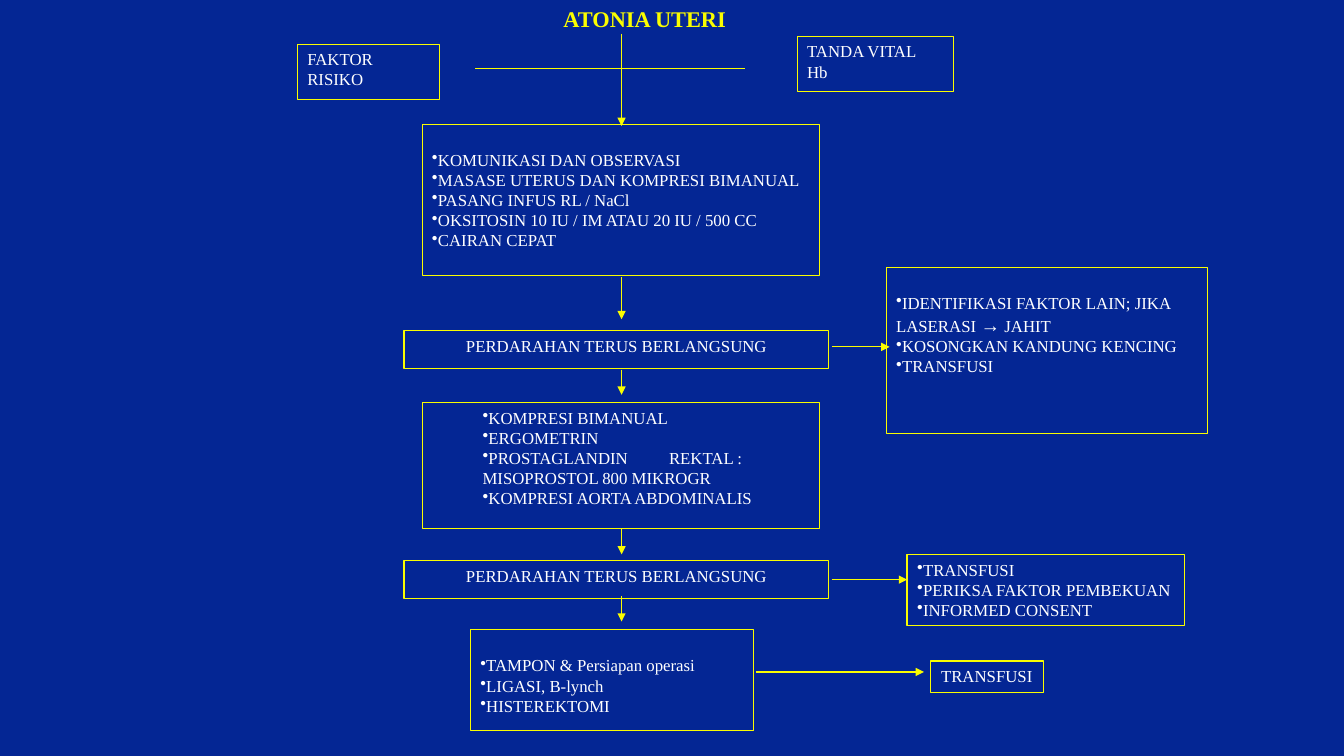
from typing import NamedTuple

from lxml.etree import SubElement
from pptx import Presentation
from pptx.dml.color import RGBColor
from pptx.enum.shapes import MSO_CONNECTOR as Connector, MSO_SHAPE as Shape
from pptx.enum.text import MSO_ANCHOR as Anchor, MSO_AUTO_SIZE as AutoSize, PP_ALIGN as Align
from pptx.oxml.ns import qn
from pptx.util import Inches, Pt

COLORS = {"background": "042694", "accent": "FAFD00", "text": "FFFFFF"}
COLUMNS, ROWS = 160, 90
CELL = Inches(7.5) / ROWS
BODY = {"name": "Times New Roman", "size": Pt(12), "bold": False}
HEADING = {"name": "Times New Roman", "size": Pt(16), "bold": True}
BLEEDING = "PERDARAHAN TERUS BERLANGSUNG"


def color(key):
    return RGBColor.from_string(COLORS[key])


def cells(*counts):
    return [round(count * CELL) for count in counts]


class Region(NamedTuple):
    """Part of the slide, in grid columns and rows."""
    left: float
    top: float
    width: float
    height: float

    def at(self, column, row):
        return self.left + column, self.top + row


def apply(target, formats):
    for attribute, value in formats.items():
        setattr(target, attribute, value)


def add_run(paragraph, text, formats, color_key="text"):
    run = paragraph.add_run()
    run.text = text
    apply(run.font, formats)
    run.font.color.rgb = color(color_key)


def add_bullet(paragraph, tab):
    properties = paragraph._p.get_or_add_pPr()
    properties.set("marL", "0")
    properties.set("indent", "0")
    SubElement(properties, qn("a:buChar"), char="•")
    if tab:
        stops = SubElement(properties, qn("a:tabLst"))
        SubElement(stops, qn("a:tab"), pos=str(Inches(tab)), algn="l")


def add_step(slide, corner, size, lines, bullets=False, align=Align.LEFT,
             inset=(0.1, 0.05), weight=0.75, fit=False, tab=None):
    step = slide.shapes.add_shape(Shape.RECTANGLE, *cells(*corner, *size))
    step.shadow.inherit = False
    step.fill.background()
    step.line.color.rgb = color("accent")
    step.line.width = Pt(weight)
    frame = step.text_frame
    apply(frame, {
        "word_wrap": not fit,
        "auto_size": AutoSize.SHAPE_TO_FIT_TEXT if fit else AutoSize.NONE,
        "vertical_anchor": Anchor.TOP,
        "margin_left": Inches(inset[0]),
        "margin_top": Inches(inset[1]),
    })
    for index, line in enumerate(lines):
        paragraph = frame.add_paragraph() if index else frame.paragraphs[0]
        paragraph.alignment = align
        if bullets:
            add_bullet(paragraph, tab if "\t" in line else None)
        # The arrow sign is set larger than the words around it
        before, sign, after = line.partition("→")
        add_run(paragraph, before, BODY)
        if sign:
            add_run(paragraph, sign, {**BODY, "size": Pt(14)})
            add_run(paragraph, after, BODY)


def add_link(slide, start, end, weight=1.0, arrow=True):
    link = slide.shapes.add_connector(Connector.STRAIGHT, *cells(*start, *end))
    link.line.color.rgb = color("accent")
    link.line.width = Pt(weight)
    if arrow:
        SubElement(link.line._get_or_add_ln(), qn("a:tailEnd"), type="triangle")
    SubElement(link._element.spPr, qn("a:effectLst"))


def header(slide, region):
    # Title
    title = slide.shapes.title
    left, top, width, height = cells(*region.at(28.7, 0), 25.3, 4.5)
    apply(title, {"left": left, "top": top, "width": width, "height": height})
    frame = title.text_frame
    apply(frame, {"word_wrap": True, "auto_size": AutoSize.NONE,
                  "vertical_anchor": Anchor.TOP})
    frame.paragraphs[0].alignment = Align.CENTER
    add_run(frame.paragraphs[0], "ATONIA UTERI", HEADING, "accent")

    # Findings on both sides, joined by the cross line
    add_step(slide, region.at(0, 5.25), (16.9, 6.6), ["FAKTOR RISIKO"])
    add_step(slide, region.at(59.5, 4.3), (18.6, 6.6), ["TANDA VITAL", "Hb"])
    add_link(slide, region.at(21.2, 8.15), region.at(53.3, 8.15), 0.75, arrow=False)
    add_link(slide, region.at(38.6, 4), region.at(38.6, 15))


def main_flow(slide, region):
    # Treatment steps
    add_step(slide, region.at(2.15, 0), (47.3, 18), [
        "KOMUNIKASI DAN OBSERVASI",
        "MASASE UTERUS DAN KOMPRESI BIMANUAL",
        "PASANG INFUS RL / NaCl",
        "OKSITOSIN 10 IU / IM ATAU 20 IU / 500 CC",
        "CAIRAN CEPAT",
    ], bullets=True, inset=(0.1, 0.25))
    add_step(slide, region.at(2.15, 33.1), (47.3, 15), [
        "KOMPRESI BIMANUAL",
        "ERGOMETRIN",
        "PROSTAGLANDIN\tREKTAL : MISOPROSTOL 800 MIKROGR",
        "KOMPRESI AORTA ABDOMINALIS",
    ], bullets=True, inset=(0.6, 0.05), tab=1.85)
    add_step(slide, region.at(7.9, 60.2), (33.75, 12), [
        "TAMPON & Persiapan operasi", "LIGASI, B-lynch", "HISTEREKTOMI",
    ], bullets=True, inset=(0.1, 0.25))

    # Checks between the steps
    for row in (24.6, 51.95):
        add_step(slide, region.at(0, row), (50.6, 4.5), [BLEEDING], align=Align.CENTER)

    # Downward arrows
    for row, length in ((18.2, 5), (29.2, 3), (48.2, 3), (56.2, 3)):
        add_link(slide, region.at(25.9, row), region.at(25.9, row + length))


def side_actions(slide, region):
    add_step(slide, region.at(15.5, 0), (38.25, 19.8), [
        "IDENTIFIKASI FAKTOR LAIN; JIKA LASERASI → JAHIT",
        "KOSONGKAN KANDUNG KENCING",
        "TRANSFUSI",
    ], bullets=True, inset=(0.1, 0.25))
    add_step(slide, region.at(18, 34.2), (33, 8.5), [
        "TRANSFUSI", "PERIKSA FAKTOR PEMBEKUAN", "INFORMED CONSENT",
    ], bullets=True, weight=1, fit=True)
    add_step(slide, region.at(20.75, 46.9), (13.45, 3.75), ["TRANSFUSI"],
             align=Align.CENTER, weight=1, fit=True)

    # Arrows from the main flow
    for start, end, row, weight in ((9.1, 15.9, 9.5, 0.75), (9, 18, 37.2, 1), (0, 20, 48.2, 1)):
        add_link(slide, region.at(start, row), region.at(end, row), weight)


def main():
    deck = Presentation()
    deck.slide_width, deck.slide_height = cells(COLUMNS, ROWS)
    slide = deck.slides.add_slide(deck.slide_layouts[5])
    slide.background.fill.solid()
    slide.background.fill.fore_color.rgb = color("background")
    header(slide, Region(35.4, 0, 78.1, 15))
    main_flow(slide, Region(48.1, 14.8, 50.6, 72.2))
    side_actions(slide, Region(90, 31.8, 53.75, 50.65))
    deck.save("out.pptx")


if __name__ == "__main__":
    main()
